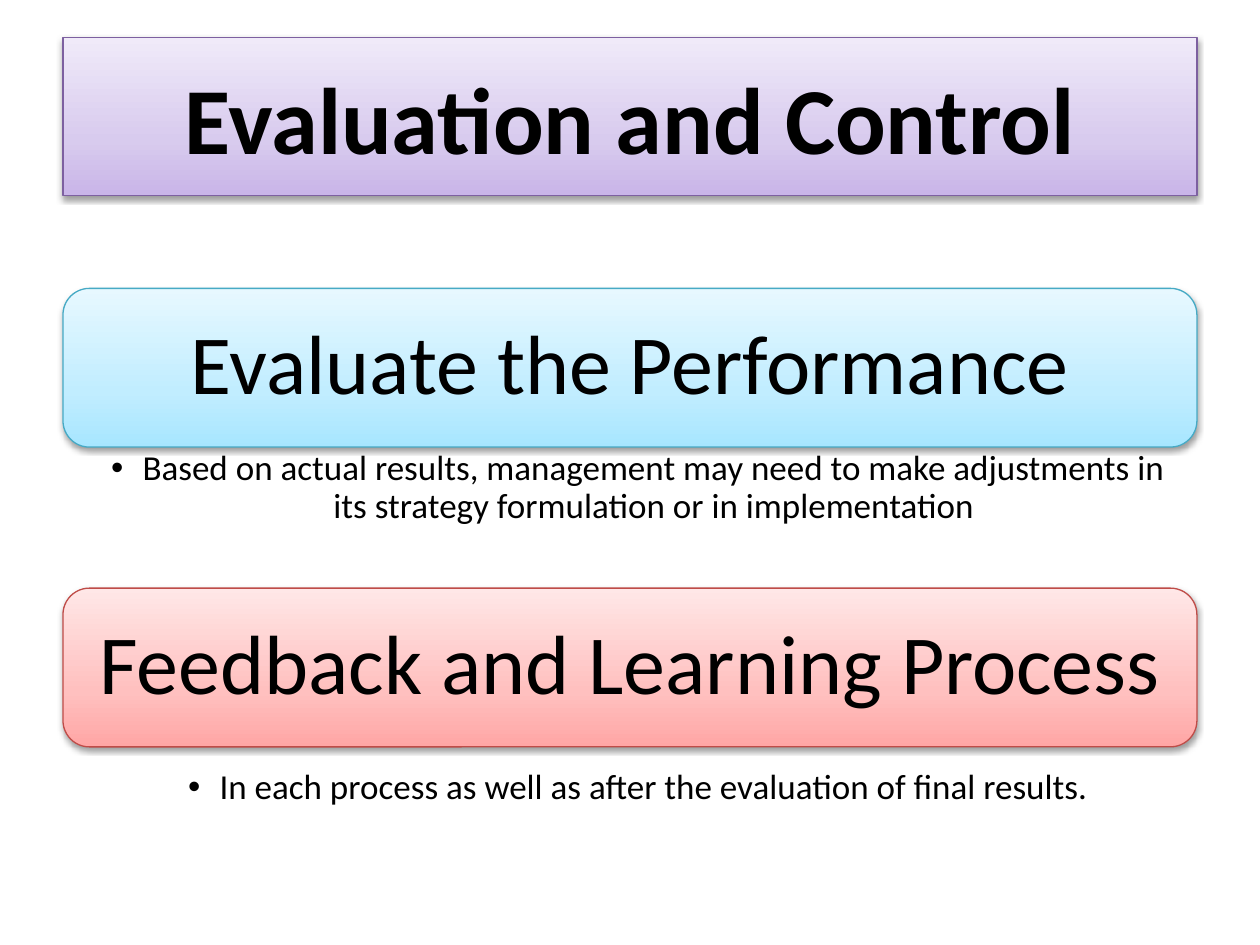
"""Build the Evaluation and Control slide with two headed steps."""
from lxml import etree
from pptx import Presentation
from pptx.dml.color import RGBColor
from pptx.enum.shapes import MSO_SHAPE
from pptx.enum.text import MSO_ANCHOR, MSO_AUTO_SIZE, PP_ALIGN
from pptx.oxml import parse_xml
from pptx.oxml.ns import nsdecls, qn
from pptx.util import Pt

ROUNDED = MSO_SHAPE.ROUNDED_RECTANGLE
TOP, MIDDLE = MSO_ANCHOR.TOP, MSO_ANCHOR.MIDDLE
CENTER = PP_ALIGN.CENTER
NO_AUTOFIT = MSO_AUTO_SIZE.NONE
TWO_CONTENT = 3

TITLE = "Evaluation and Control"
STEPS = [
    {"heading": "Evaluate the Performance", "palette": "blue",
     "detail": "Based on actual results, management may need to make adjustments in "
               "its strategy formulation or in implementation", "gap": 0},
    {"heading": "Feedback and Learning Process", "palette": "red",
     "detail": "In each process as well as after the evaluation of final results.",
     "gap": 11},
]
THEME = {
    "font": "Calibri", "text": "000000",
    "title_size": 54, "heading_size": 48, "detail_size": 20,
    "line_width": 0.75, "stops": (0, 35, 100),
    "purple": {"fill": ("C9B5E8", "D8CBEE", "F0EAF9"), "line": "7D60A0"},
    "blue": {"fill": ("A7E6FF", "C1EDFF", "E7F8FF"), "line": "46AAC5"},
    "red": {"fill": ("FFA6A5", "FFC0BF", "FFE7E7"), "line": "BF4C48"},
}
LEFT, WIDTH = 36, 648
TITLE_TOP, TITLE_HEIGHT = 21.6, 90
FIRST_TOP, STEP_PITCH = 164.8, 171.3
CARD_HEIGHT, DETAIL_HEIGHT = 90.7, 62.6
TITLE_INSETS = (7.2, 3.6, 7.2, 3.6)
CARD_INSETS = (10, 10, 10, 10)
DETAIL_INSETS = (20.6, 1.8, 11.5, 1.8)
BULLET_INDENT = 18
SHADOW = (
    f'<a:outerShdw {nsdecls("a")} blurRad="{Pt(3.1)}" dist="{Pt(1.6)}" dir="5400000" '
    'rotWithShape="0"><a:srgbClr val="000000"><a:alpha val="38000"/></a:srgbClr></a:outerShdw>'
)


def set_values(target, values):
    """Set each named attribute on the target."""
    for name, value in values.items():
        setattr(target, name, value)


def place(shape, top, height):
    """Move a shape into the common column."""
    set_values(shape, {"left": Pt(LEFT), "top": Pt(top),
                       "width": Pt(WIDTH), "height": Pt(height)})


def paint(shape, palette):
    """Give a shape its gradient, outline and soft shadow."""
    shape.fill.gradient()
    shape.fill.gradient_angle = 90
    properties = shape.element.spPr
    stop_list = properties.find(qn("a:gradFill")).find(qn("a:gsLst"))
    for stop in list(stop_list):
        stop_list.remove(stop)
    for position, color in zip(THEME["stops"], palette["fill"]):
        stop = etree.SubElement(stop_list, qn("a:gs"), pos=str(position * 1000))
        etree.SubElement(stop, qn("a:srgbClr"), val=color)
    shape.line.color.rgb = RGBColor.from_string(palette["line"])
    shape.line.width = Pt(THEME["line_width"])
    shape.shadow.inherit = False
    properties.find(qn("a:effectLst")).append(parse_xml(SHADOW))


def write(shape, text, size, insets, anchor=MIDDLE, bold=False, spacing=0.9):
    """Write one centred paragraph and return it."""
    frame = shape.text_frame
    sides = ("margin_left", "margin_top", "margin_right", "margin_bottom")
    set_values(frame, dict(zip(sides, map(Pt, insets))))
    set_values(frame, {"text": text, "word_wrap": True, "auto_size": NO_AUTOFIT,
                       "vertical_anchor": anchor})
    paragraph = frame.paragraphs[0]
    set_values(paragraph, {"alignment": CENTER, "line_spacing": spacing,
                           "space_before": Pt(0)})
    font = paragraph.runs[0].font
    set_values(font, {"name": THEME["font"], "size": Pt(size), "bold": bold})
    font.color.rgb = RGBColor.from_string(THEME["text"])
    return paragraph


def add_step(slide, step, detail, top):
    """Add a heading card and fill the bulleted placeholder below it."""
    card = slide.shapes.add_shape(ROUNDED, Pt(LEFT), Pt(top), Pt(WIDTH), Pt(CARD_HEIGHT))
    paint(card, THEME[step["palette"]])
    write(card, step["heading"], THEME["heading_size"], CARD_INSETS)
    place(detail, top + CARD_HEIGHT + step["gap"], DETAIL_HEIGHT)
    paragraph = write(detail, step["detail"], THEME["detail_size"], DETAIL_INSETS, TOP)
    properties = paragraph._p.get_or_add_pPr()
    properties.set("marL", str(Pt(BULLET_INDENT)))
    properties.set("indent", str(-Pt(BULLET_INDENT)))
    etree.SubElement(properties, qn("a:buChar"), char="•")


def main():
    """Build and save the presentation."""
    presentation = Presentation()
    set_values(presentation, {"slide_width": Pt(720), "slide_height": Pt(540)})
    slide = presentation.slides.add_slide(presentation.slide_layouts[TWO_CONTENT])
    title, *details = list(slide.placeholders)[:1 + len(STEPS)]
    place(title, TITLE_TOP, TITLE_HEIGHT)
    paint(title, THEME["purple"])
    write(title, TITLE, THEME["title_size"], TITLE_INSETS, bold=True, spacing=1.0)
    for index, (step, detail) in enumerate(zip(STEPS, details)):
        add_step(slide, step, detail, FIRST_TOP + index * STEP_PITCH)
    presentation.save("out.pptx")


if __name__ == "__main__":
    main()
